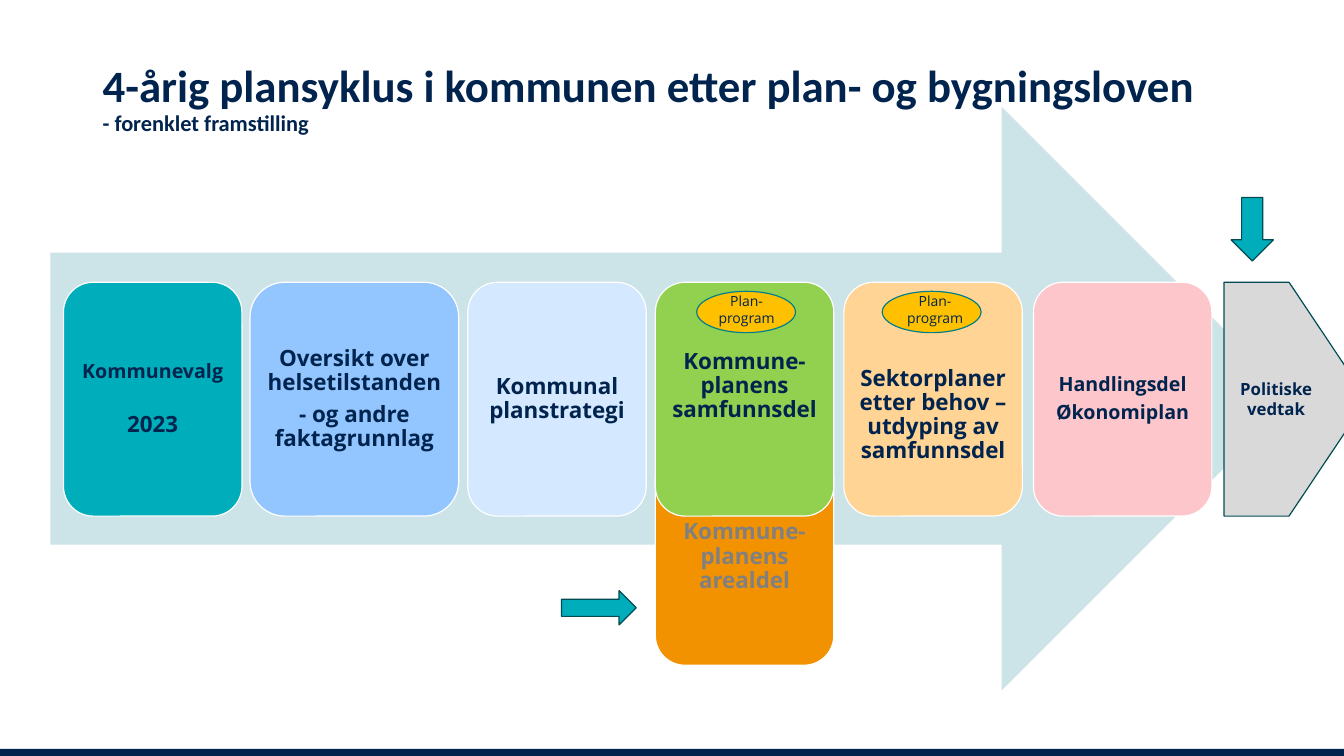
from pptx import Presentation
from pptx import util as u
from pptx.dml.color import RGBColor
from pptx.enum import shapes, text

kinds = shapes.MSO_SHAPE
NAVY, TEAL, DARK = "00244E", "00ADBA", "004C52"

deck = Presentation()
deck.slide_width, deck.slide_height = u.Inches(13.33), u.Inches(7.5)
slide = deck.slides.add_slide(deck.slide_layouts[6])


def draw(kind, box, fill, line=None):
    shape = slide.shapes.add_shape(kind, *[u.Inches(v) for v in box])
    shape.shadow.inherit = False
    shape.fill.solid()
    shape.fill.fore_color.rgb = RGBColor.from_string(fill)
    if line:
        shape.line.color.rgb = RGBColor.from_string(line)
        shape.line.width = u.Pt(0.85)
    else:
        shape.line.fill.background()
    return shape


def write(shape, lines, size, color=NAVY, bold=True, font="Open Sans",
          align=text.PP_ALIGN.CENTER):
    frame = shape.text_frame
    frame.word_wrap = True
    for i, line in enumerate(lines):
        para = frame.paragraphs[0] if i == 0 else frame.add_paragraph()
        para.text = line
        para.alignment = align
        para.font.size = u.Pt(size)
        para.font.name = font
        para.font.bold = bold
        para.font.color.rgb = RGBColor.from_string(color)
    return frame


draw(kinds.RECTANGLE, (0, 7.43, 13.33, 0.08), NAVY)
draw(kinds.RIGHT_ARROW, (0.5, 1.06, 12.33, 5.79), "CCE3E7")

title = slide.shapes.add_textbox(*[u.Inches(v) for v in (0.92, 0.27, 11.5, 1.45)])
frame = write(title, ["4-årig plansyklus i kommunen etter plan- og bygningsloven",
                      "- forenklet framstilling"],
              32, font="Calibri", align=text.PP_ALIGN.LEFT)
frame.vertical_anchor = text.MSO_ANCHOR.MIDDLE
frame.paragraphs[1].font.size = u.Pt(16)
for para in frame.paragraphs:
    para.line_spacing = 0.9

# left, top, width, height, fill, lines, size, colour, gap, extra top, extra bottom
WIDE, TOP, TALL = 1.77, 2.8, 2.32
steps = [
    (6.5, 4.45, WIDE, 2.15, "F39200", ["Kommune-planens arealdel"], 16, "808080", 0, 0, 0),
    (0.63, TOP, WIDE, TALL, TEAL, ["Kommunevalg", "2023"], 16, NAVY, 22, 0, 0),
    (2.48, TOP, 2.07, TALL, "93C5FF",
     ["Oversikt over helsetilstanden", "- og andre faktagrunnlag"], 16, NAVY, 5.6, 0, 0),
    (4.64, TOP, WIDE, TALL, "D4E8FF", ["Kommunal planstrategi"], 16, NAVY, 0, 0, 0),
    (6.5, TOP, WIDE, TALL, "92D050", ["Kommune-planens samfunnsdel"], 16, NAVY, 0, 0, 0.26),
    (8.37, TOP, WIDE, TALL, "FFD494",
     ["Sektorplaner etter behov – utdyping av samfunnsdel"], 16, NAVY, 0, 0.32, 0),
    (10.25, TOP, WIDE, TALL, "FCC6CB", ["Handlingsdel", "Økonomiplan"], 14, NAVY, 4.9, 0, 0),
]
for *box, fill, lines, size, color, gap, above, below in steps:
    card = draw(kinds.ROUNDED_RECTANGLE, box, fill, "FFFFFF")
    frame = write(card, lines, size, color)
    frame.margin_left = frame.margin_right = u.Inches(0.07)
    frame.margin_top = u.Inches(0.07 + above)
    frame.margin_bottom = u.Inches(0.07 + below)
    for para in frame.paragraphs:
        para.line_spacing = 0.9
    for para in frame.paragraphs[:-1]:
        para.space_after = u.Pt(gap)
    if lines[0] == "Kommunevalg":
        frame.paragraphs[0].font.size = u.Pt(14)

for left, label in ((6.91, 6.94), (8.75, 8.81)):
    draw(kinds.OVAL, (left, 2.89, 0.98, 0.41), "FFC000", "00808A")
    note = slide.shapes.add_textbox(*[u.Inches(v) for v in (label, 2.85, 0.93, 0.44)])
    write(note, ["Plan-program"], 10, bold=False)

vote = draw(kinds.PENTAGON, (12.14, TOP, 1.42, TALL), "D9D9D9", DARK)
vote.adjustments[0] = 0.546
write(vote, ["Politiske vedtak"], 12)

draw(kinds.RIGHT_ARROW, (5.57, 5.86, 0.74, 0.34), TEAL, DARK)
draw(kinds.DOWN_ARROW, (12.21, 1.96, 0.42, 0.63), TEAL, DARK)

deck.save("out.pptx")
